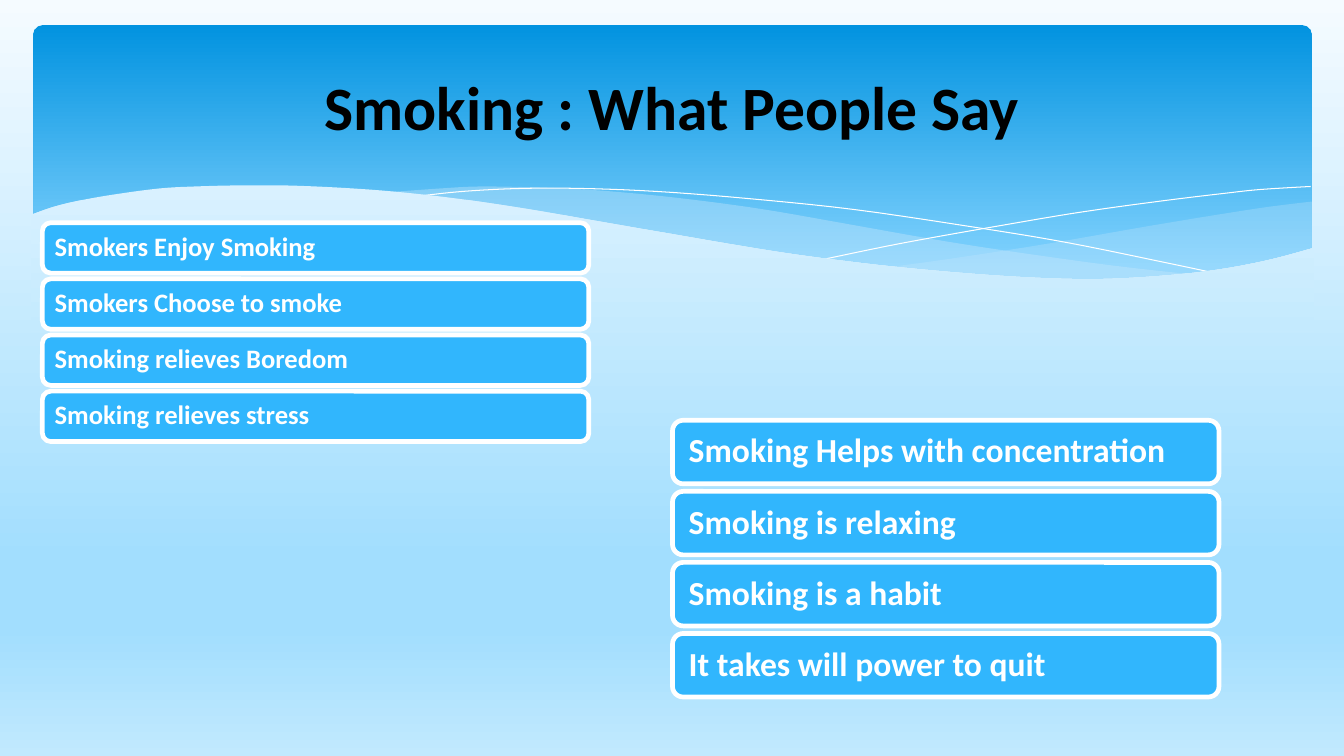
from dataclasses import dataclass

from lxml import etree
from pptx import Presentation
from pptx import util as u
from pptx.dml.color import RGBColor
from pptx.enum import shapes, text
from pptx.oxml.ns import qn

# Content
TITLE = "Smoking : What People Say"
CARD_GROUPS = [
    dict(left=0.42, top=2.21, height=0.5, pitch=0.557, size=19, inset=0.1,
         lines=["Smokers Enjoy Smoking", "Smokers Choose to smoke",
                "Smoking relieves Boredom", "Smoking relieves stress"]),
    dict(left=6.67, top=4.17, height=0.63, pitch=0.705, size=24, inset=0.13,
         lines=["Smoking Helps with concentration", "Smoking is relaxing",
                "Smoking is a habit", "It takes will power to quit"]),
]
CARD_WIDTH = 5.42

# Wave edges as knots in inches; each edge is smoothed on its own
RIGHT_WAVE = [
    [(13.01, 2), (12.46, 2.07), (11.47, 2.23), (10.38, 2.42), (9.41, 2.57), (8.82, 2.65)],
    [(8.82, 2.65), (9.58, 2.72), (10.25, 2.77), (10.85, 2.78), (11.51, 2.75),
     (12.07, 2.69), (12.57, 2.59), (13.01, 2.47)],
]
MIDDLE_WAVE = [
    [(11.9, 2.73), (11.16, 2.65), (10.34, 2.54), (9.41, 2.4), (8.39, 2.22), (7.59, 2.08),
     (6.86, 1.98), (6.19, 1.91), (5.6, 1.87), (4.82, 1.85), (4.37, 1.87), (3.82, 1.91)],
    [(3.82, 1.91), (4.56, 1.99), (5.39, 2.11), (5.99, 2.22), (7.06, 2.4), (8.02, 2.55),
     (8.87, 2.66), (9.63, 2.74), (10.3, 2.77), (10.9, 2.78), (11.43, 2.77), (11.9, 2.73)],
]
FALLING_LINE = [
    [(4.12, 1.95), (4.58, 1.9), (5.16, 1.87), (5.77, 1.87), (6.52, 1.9), (7.42, 1.97),
     (8.48, 2.08), (9.7, 2.26), (10.6, 2.41), (11.58, 2.61), (12.1, 2.72)],
]
RISING_LINE = [
    [(8.18, 2.57), (8.96, 2.41), (9.97, 2.23), (10.75, 2.1), (11.55, 1.99),
     (12.13, 1.92), (12.5, 1.88), (13, 1.85)],
]
FRONT_WAVE = [
    [(13.03, 2.46), (12.54, 2.59), (11.98, 2.69), (11.34, 2.75), (10.78, 2.77),
     (10.15, 2.75), (9.44, 2.7), (8.63, 2.62), (7.72, 2.5), (6.71, 2.33), (5.96, 2.2),
     (5.21, 2.07), (4.53, 1.97), (3.9, 1.9), (3.33, 1.86), (2.82, 1.84), (2.35, 1.84),
     (1.94, 1.85), (1.58, 1.87), (1.13, 1.93), (0.79, 1.99), (0.54, 2.05), (0.31, 2.13)],
    [(0.31, 3.29), (13.03, 3.29)],
]


@dataclass(frozen=True)
class Theme:
    font: str = "Calibri"
    title_size: int = 44
    title: str = "000000"
    card: str = "31B6FD"
    white: str = "FFFFFF"
    mist: str = "C6E7FC"
    card_line: float = 3.35
    sky: tuple = ((0, "F5FBFF"), (74, "A2DEFE"), (83, "A2DEFE"), (100, "C1E9FE"))
    banner: tuple = ((0, "0293E0"), (90, "83D3FE"))
    front: tuple = ((0, "D9F1FF"), (100, "C4EAFE"))  # the sky from 1.84 to 3.29 in


THEME = Theme()

deck = Presentation()
deck.slide_width, deck.slide_height = u.Inches(13.33), u.Inches(7.5)
page = deck.slides.add_slide(deck.slide_layouts[6])


def paint_gradient(fill, owner, stops):
    """Fill from top to bottom with (percent, colour) stops."""
    fill.gradient()
    fill.gradient_angle = 270
    stop_list = next(owner.element.iter(qn("a:gsLst")))
    for stop in list(stop_list):
        stop_list.remove(stop)
    for percent, colour in stops:
        stop = etree.SubElement(stop_list, qn("a:gs"), pos=str(percent * 1000))
        etree.SubElement(stop, qn("a:srgbClr"), val=colour)


def paint_solid(shape, colour, alpha=None):
    shape.fill.solid()
    shape.fill.fore_color.rgb = RGBColor.from_string(colour)
    if alpha is not None:
        tint = next(shape.element.spPr.iter(qn("a:srgbClr")))
        etree.SubElement(tint, qn("a:alpha"), val=str(alpha * 1000))


def outline(shape, colour, width):
    shape.line.color.rgb = RGBColor.from_string(colour)
    shape.line.width = u.Pt(width)


def smooth(knots, steps=5):
    """Catmull-Rom curve through the knots."""
    if len(knots) < 3:
        return knots
    padded = [knots[0], *knots, knots[-1]]
    curve = []
    for a, b, c, d in zip(padded, padded[1:], padded[2:], padded[3:]):
        for step in range(steps):
            t = step / steps
            curve.append(tuple(
                q + t * (r - p) / 2 + t**2 * (2 * p - 5 * q + 4 * r - s) / 2
                + t**3 * (3 * q - p - 3 * r + s) / 2
                for p, q, r, s in zip(a, b, c, d)))
    return curve + [knots[-1]]


def add_wave(edges, close=True):
    points = [(u.Inches(x), u.Inches(y)) for edge in edges for x, y in smooth(edge)]
    builder = page.shapes.build_freeform(*points[0])
    builder.add_line_segments(points[1:], close=close)
    wave = builder.convert_to_shape()
    wave.shadow.inherit = False
    if close:
        wave.line.fill.background()
    else:
        wave.fill.background()
    return wave


def add_round_box(left, top, width, height):
    box = page.shapes.add_shape(shapes.MSO_SHAPE.ROUNDED_RECTANGLE,
                                *map(u.Inches, (left, top, width, height)))
    box.shadow.inherit = False
    return box


def write(box, line, size, colour, align):
    frame = box.text_frame
    frame.word_wrap = True
    frame.vertical_anchor = text.MSO_ANCHOR.MIDDLE
    para = frame.paragraphs[0]
    para.text = line
    para.alignment = align
    para.font.name, para.font.size, para.font.bold = THEME.font, u.Pt(size), True
    para.font.color.rgb = RGBColor.from_string(colour)
    return para


# Sky and banner
paint_gradient(page.background.fill, page, THEME.sky)
banner = add_round_box(0.33, 0.25, 12.68, 2.7)
banner.adjustments[0] = 0.034
banner.line.fill.background()
paint_gradient(banner.fill, banner, THEME.banner)

# Waves under the banner
for edges, alpha in ((RIGHT_WAVE, 29), (MIDDLE_WAVE, 40)):
    paint_solid(add_wave(edges), THEME.mist, alpha)
for edges in (FALLING_LINE, RISING_LINE):
    outline(add_wave(edges, close=False), THEME.white, 0)
front = add_wave(FRONT_WAVE)
paint_gradient(front.fill, front, THEME.front)

# Title
title = page.shapes.add_textbox(*map(u.Inches, (0.67, 0.37, 12, 1.37)))
write(title, TITLE, THEME.title_size, THEME.title, text.PP_ALIGN.CENTER)

# Cards
for group in CARD_GROUPS:
    for row, line in enumerate(group["lines"]):
        card = add_round_box(group["left"], group["top"] + row * group["pitch"],
                             CARD_WIDTH, group["height"])
        paint_solid(card, THEME.card)
        outline(card, THEME.white, THEME.card_line)
        frame = card.text_frame
        frame.margin_left = frame.margin_right = u.Inches(group["inset"])
        frame.margin_top = frame.margin_bottom = u.Inches(0.08)
        para = write(card, line, group["size"], THEME.white, text.PP_ALIGN.LEFT)
        para.line_spacing = 0.9

deck.save("out.pptx")
